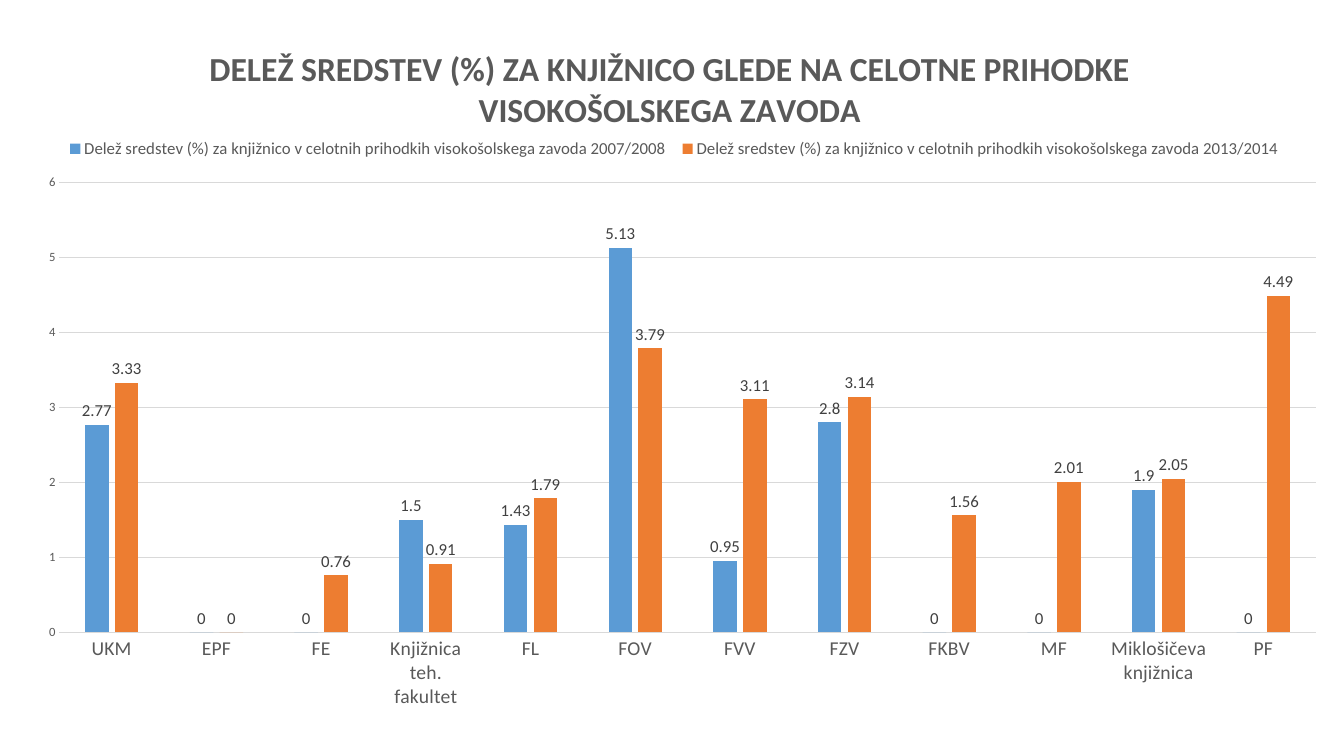
from lxml import etree
from pptx import Presentation
from pptx.chart.data import CategoryChartData
from pptx.dml.color import RGBColor
from pptx.enum.chart import (XL_CHART_TYPE as CHART, XL_LABEL_POSITION as LABEL,
                             XL_LEGEND_POSITION as LEGEND, XL_TICK_MARK as TICK)
from pptx.oxml.ns import qn
from pptx.util import Inches, Pt

BLUE = RGBColor(0x5B, 0x9B, 0xD5)
ORANGE = RGBColor(0xED, 0x7D, 0x31)
GRAY = RGBColor(0x59, 0x59, 0x59)
DARK = RGBColor(0x40, 0x40, 0x40)
LIGHT = RGBColor(0xD9, 0xD9, 0xD9)
BLACK = RGBColor(0, 0, 0)

TITLE = "DELEŽ SREDSTEV (%) ZA KNJIŽNICO GLEDE NA CELOTNE PRIHODKE VISOKOŠOLSKEGA ZAVODA"
SERIES_NAME = "Delež sredstev (%) za knjižnico v celotnih prihodkih visokošolskega zavoda "
LIBRARIES = ["UKM", "EPF", "FE", "Knjižnica teh. fakultet", "FL", "FOV", "FVV",
             "FZV", "FKBV", "MF", "Miklošičeva knjižnica", "PF"]
SHARES = {
    "2007/2008": [2.77, 0, 0, 1.5, 1.43, 5.13, 0.95, 2.8, 0, 0, 1.9, 0],
    "2013/2014": [3.33, 0, 0.76, 0.91, 1.79, 3.79, 3.11, 3.14, 1.56, 2.01, 2.05, 4.49],
}


def set_all(target, values):
    for name, value in values.items():
        setattr(target, name, value)


class ChartSlide:
    font_name = "Calibri"

    def __init__(self, prs):
        self.s = prs.slides.add_slide(prs.slide_layouts[6])

    def style_font(self, font, size, color=GRAY, bold=False):
        set_all(font, {"name": self.font_name, "size": Pt(size), "bold": bold})
        font.color.rgb = color

    def style_line(self, line):
        line.width = Pt(0.75)
        line.color.rgb = LIGHT

    def place(self, chart, tag, index, values):
        parent = next(chart.element.iter(qn(tag))) if hasattr(chart, "element") \
            else next(chart._chartSpace.iter(qn(tag)))
        for old in parent.findall(qn("c:layout")):
            parent.remove(old)
        layout = etree.Element(qn("c:layout"))
        manual = etree.SubElement(layout, qn("c:manualLayout"))
        for name, value in values.items():
            etree.SubElement(manual, qn(f"c:{name}")).set("val", str(value))
        parent.insert(index, layout)

    def add_columns(self, box, categories, series):
        data = CategoryChartData(number_format="General")
        data.categories = categories
        for name, values in series.items():
            data.add_series(name, values)
        chart = self.s.shapes.add_chart(
            CHART.COLUMN_CLUSTERED, *map(Inches, box), data).chart
        self.style_font(chart.font, 10, BLACK)
        set_all(chart.plots[0], {"gap_width": 219, "overlap": -27,
                                 "vary_by_categories": False})
        return chart

    def format_series(self, chart, colors):
        for series, color in zip(chart.plots[0].series, colors):
            series.format.fill.solid()
            series.format.fill.fore_color.rgb = color
            labels = series.data_labels
            set_all(labels, {"show_value": True, "position": LABEL.OUTSIDE_END})
            self.style_font(labels.font, 12, DARK)

    def format_axes(self, chart):
        for axis, size in ((chart.category_axis, 14), (chart.value_axis, 9)):
            set_all(axis, {"major_tick_mark": TICK.NONE, "minor_tick_mark": TICK.NONE})
            self.style_font(axis.tick_labels.font, size)
        self.style_line(chart.category_axis.format.line)
        axis = chart.value_axis
        set_all(axis, {"minimum_scale": 0, "maximum_scale": 6, "major_unit": 1,
                       "has_major_gridlines": True})
        axis.format.line.fill.background()
        self.style_line(axis.major_gridlines.format.line)

    def add_title(self, chart, text):
        chart.has_title = True
        p = chart.chart_title.text_frame.paragraphs[0]
        r = p.add_run()
        r.text = text
        self.style_font(r.font, 24, bold=True)
        self.place(chart, "c:title", 1, {"xMode": "edge", "yMode": "edge",
                                         "x": 0.14, "y": 0.02})

    def add_legend(self, chart):
        chart.has_legend = True
        set_all(chart.legend, {"position": LEGEND.BOTTOM, "include_in_layout": False})
        self.style_font(chart.legend.font, 12)
        self.place(chart, "c:legend", 1, {"xMode": "edge", "yMode": "edge",
                                          "x": 0.03, "y": 0.16, "w": 0.94, "h": 0.04})


def main():
    prs = Presentation()
    set_all(prs, {"slide_width": Inches(13.33), "slide_height": Inches(7.5)})
    slide = ChartSlide(prs)
    series = {SERIES_NAME + year: values for year, values in SHARES.items()}
    chart = slide.add_columns((0.2, 0.26, 12.98, 6.77), LIBRARIES, series)
    slide.format_series(chart, (BLUE, ORANGE))
    slide.format_axes(chart)
    slide.add_title(chart, TITLE)
    slide.add_legend(chart)
    slide.place(chart, "c:plotArea", 0, {"layoutTarget": "inner", "xMode": "edge",
                                         "yMode": "edge", "x": 0.03, "y": 0.23,
                                         "w": 0.96, "h": 0.66})
    prs.save("out.pptx")


if __name__ == "__main__":
    main()
